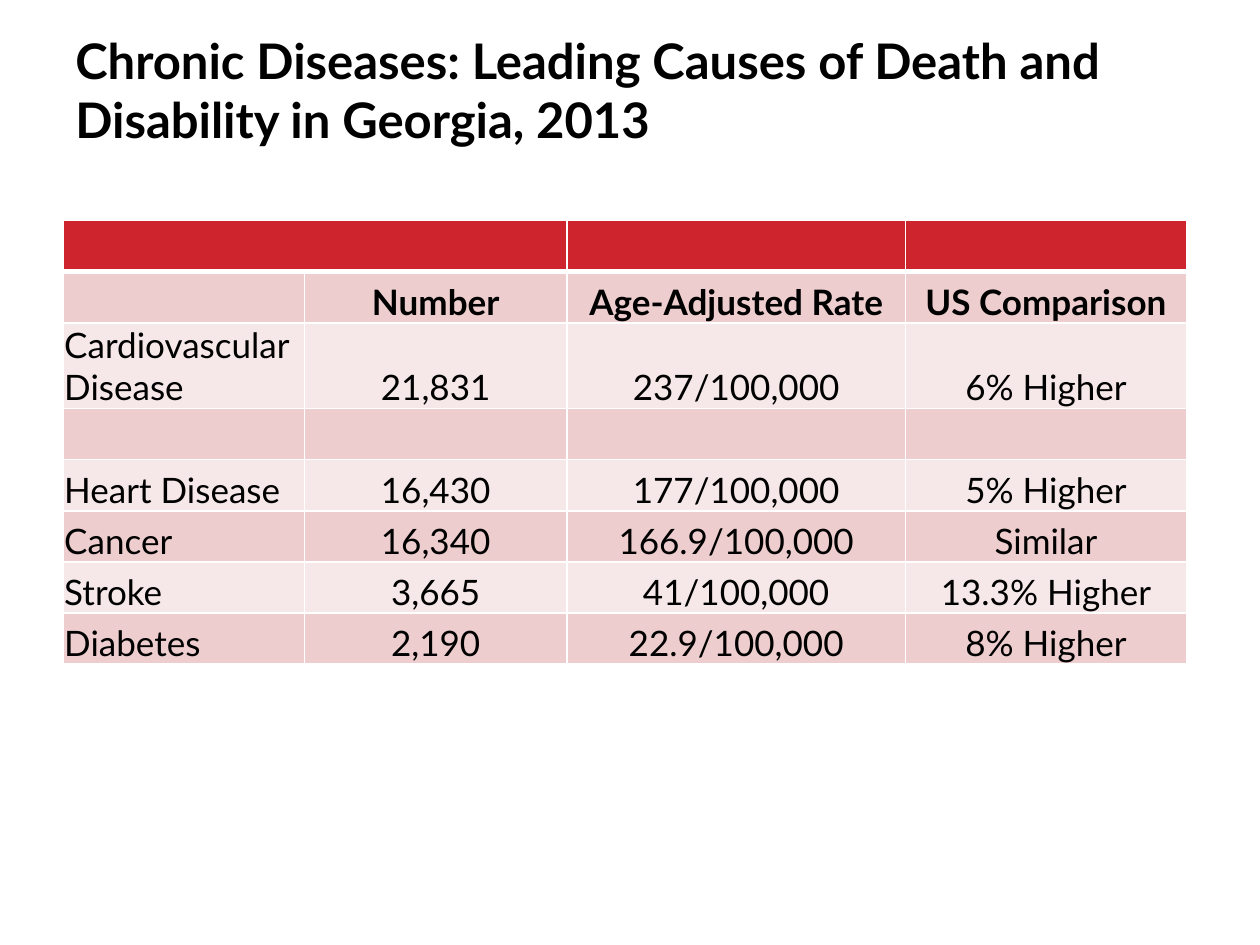
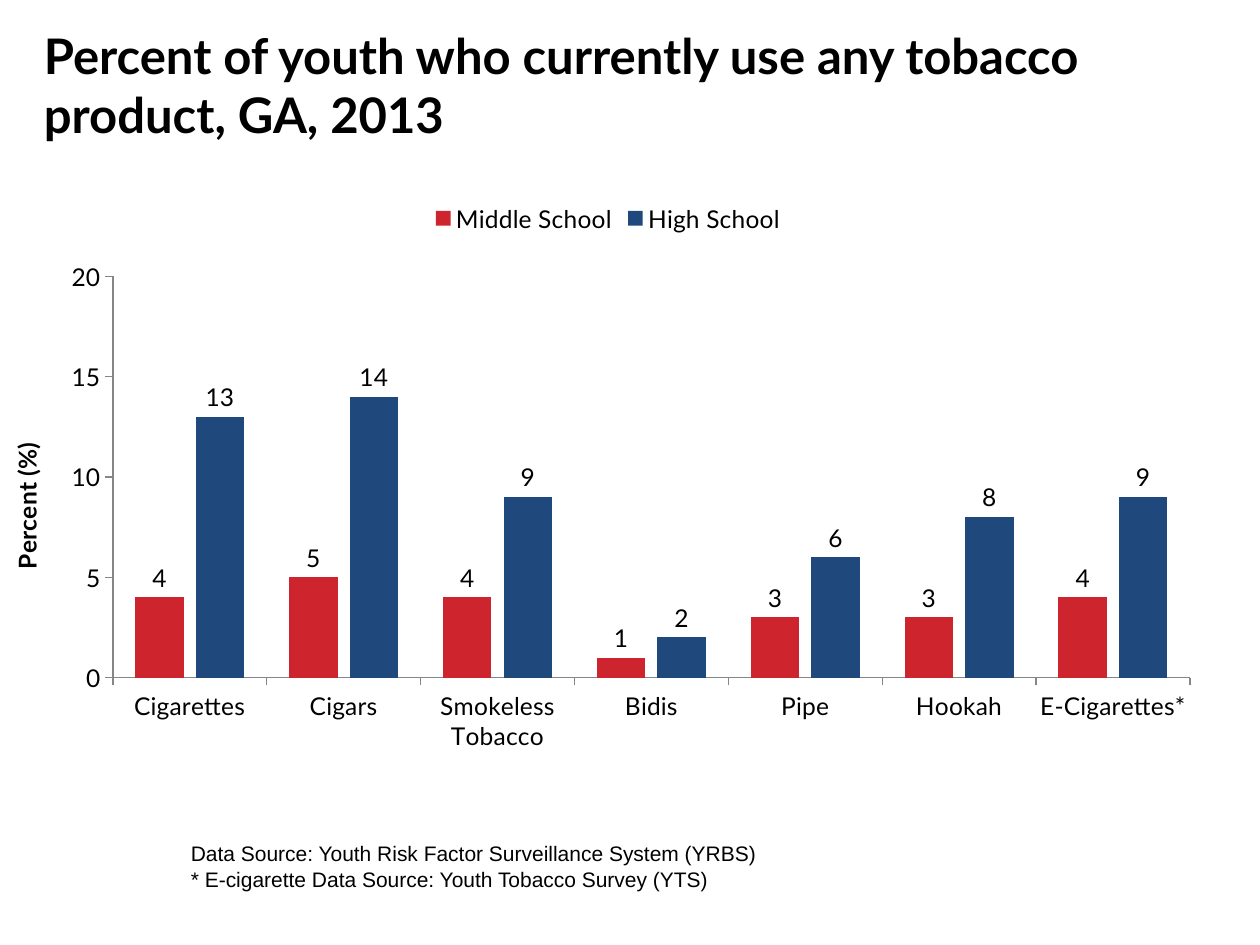
from dataclasses import dataclass

from lxml.etree import SubElement
from pptx import Presentation
from pptx.chart.data import CategoryChartData
from pptx.dml.color import RGBColor
from pptx.enum.chart import XL_CHART_TYPE as ChartType, XL_LABEL_POSITION as LabelPos
from pptx.enum.chart import XL_LEGEND_POSITION as LegendPos, XL_TICK_MARK as Tick
from pptx.enum.text import MSO_ANCHOR as Anchor, PP_ALIGN as Align
from pptx.oxml import parse_xml
from pptx.oxml.ns import nsdecls, qn
from pptx.util import Emu, Inches, Pt

CELL = Inches(1) / 12  # the slide is a grid of 120 columns by 90 rows
COLORS = {"text": "000000", "paper": "FFFFFF", "red": "CE242E", "blue": "1F497D",
          "band_dark": "EDCDCD", "band_light": "F6E8E8", "axis": "868686"}
FONT, NOTE_FONT = "Lato", "Arial"


@dataclass(frozen=True)
class Box:
    """A rectangle in grid cells."""
    col: float
    row: float
    cols: float
    rows: float

    def emu(self) -> tuple[Emu, ...]:
        return tuple(grid(n) for n in (self.col, self.row, self.cols, self.rows))


@dataclass(frozen=True)
class TextStyle:
    size: int
    bold: bool = False
    font: str = FONT


@dataclass(frozen=True)
class Series:
    name: str
    values: tuple[int, ...]
    color: str


TITLE = TextStyle(28, bold=True)
HEAD = TextStyle(20, bold=True)
BODY = TextStyle(20)
CHART = TextStyle(14)
AXIS_TITLE = TextStyle(14, bold=True)
NOTE = TextStyle(12, font=NOTE_FONT)

DISEASE_COLS = (23, 25, 32.25, 26.75)
TALL_ROW, TALL_ROWS = 2, 8.15
DISEASES = (
    ("", "", "", ""),
    ("", "Number", "Age-Adjusted Rate", "US Comparison"),
    ("Cardiovascular Disease", "21,831", "237/100,000", "6% Higher"),
    ("", "", "", ""),
    ("Heart Disease", "16,430", "177/100,000", "5% Higher"),
    ("Cancer", "16,340", "166.9/100,000", "Similar"),
    ("Stroke", "3,665", "41/100,000", "13.3% Higher"),
    ("Diabetes", "2,190", "22.9/100,000", "8% Higher"),
)
PRODUCTS = ("Cigarettes", "Cigars", "Smokeless Tobacco", "Bidis", "Pipe", "Hookah",
            "E-Cigarettes*")
SCHOOLS = (
    Series("Middle School", (4, 5, 4, 1, 3, 3, 4), "red"),
    Series("High School", (13, 14, 9, 2, 6, 8, 9), "blue"),
)
PLOT_AREA = {"x": 0.09, "y": 0.147, "w": 0.892, "h": 0.677}


def grid(cells: float) -> Emu:
    return Emu(round(cells * CELL))


def rgb(name: str) -> RGBColor:
    return RGBColor.from_string(COLORS[name])


def set_font(font, style: TextStyle) -> None:
    font.name, font.size, font.bold = style.font, Pt(style.size), style.bold
    font.color.rgb = rgb("text")


def add_run(p, text: str, style: TextStyle) -> None:
    r = p.add_run()
    r.text = text
    set_font(r.font, style)


def add_text(s, box: Box, lines: tuple[str, ...], style: TextStyle,
             anchor: Anchor = Anchor.TOP) -> None:
    tf = s.shapes.add_textbox(*box.emu()).text_frame
    tf.word_wrap, tf.vertical_anchor = True, anchor
    for i, line in enumerate(lines):
        add_run(tf.add_paragraph() if i else tf.paragraphs[0], line, style)


def add_title(s, box: Box, text: str) -> None:
    add_text(s, box, (text,), TITLE, Anchor.MIDDLE)


def set_borders(cell, bottom: float) -> None:
    """White rules of 1 pt, except for the given width below the cell."""
    tc_pr = cell._tc.get_or_add_tcPr()
    widths = {"lnL": 1, "lnR": 1, "lnT": 1, "lnB": bottom}
    for i, (tag, width) in enumerate(widths.items()):
        ln = parse_xml(f'<a:{tag} {nsdecls("a")} w="{Pt(width)}"><a:solidFill>'
                       f'<a:srgbClr val="{COLORS["paper"]}"/></a:solidFill></a:{tag}>')
        tc_pr.insert(i, ln)


def fill_cell(cell, row: int, col: int, text: str) -> None:
    cell.vertical_anchor = Anchor.BOTTOM
    cell.margin_left = cell.margin_right = cell.margin_top = Inches(0.01)
    cell.margin_bottom = 0
    cell.fill.solid()
    band = "band_dark" if row % 2 else "band_light"
    cell.fill.fore_color.rgb = rgb(band if row else "red")
    set_borders(cell, 1 if row else 3)
    p = cell.text_frame.paragraphs[0]
    p.alignment = Align.CENTER if col else Align.LEFT
    style = HEAD if row < 2 else BODY
    if text:
        add_run(p, text, style)
    else:
        set_font(p.font, style)


def add_disease_table(s, box: Box) -> None:
    table = s.shapes.add_table(len(DISEASES), len(DISEASE_COLS), *box.emu()).table
    for column, width in zip(table.columns, DISEASE_COLS):
        column.width = grid(width)
    row_height = (box.rows - TALL_ROWS) / (len(DISEASES) - 1)
    for i, texts in enumerate(DISEASES):
        table.rows[i].height = grid(TALL_ROWS if i == TALL_ROW else row_height)
        for j, text in enumerate(texts):
            fill_cell(table.cell(i, j), i, j, text)
    table.cell(0, 0).merge(table.cell(0, 1))


def set_plot_area(chart) -> None:
    plot_area = chart._chartSpace.chart.plotArea
    for old in plot_area.findall(qn("c:layout")):
        plot_area.remove(old)
    layout = parse_xml(f'<c:layout {nsdecls("c")}><c:manualLayout/></c:layout>')
    manual = layout[0]
    SubElement(manual, qn("c:layoutTarget")).set("val", "inner")
    for axis in "xy":
        SubElement(manual, qn(f"c:{axis}Mode")).set("val", "edge")
    for key, share in PLOT_AREA.items():
        SubElement(manual, qn(f"c:{key}")).set("val", str(share))
    plot_area.insert(0, layout)


def style_axes(chart) -> None:
    for axis in (chart.category_axis, chart.value_axis):
        axis.has_major_gridlines = False
        axis.major_tick_mark, axis.minor_tick_mark = Tick.OUTSIDE, Tick.NONE
        axis.format.line.color.rgb = rgb("axis")
        axis.format.line.width = Pt(0.75)
        set_font(axis.tick_labels.font, CHART)
    values = chart.value_axis
    values.minimum_scale, values.maximum_scale, values.major_unit = 0, 20, 5
    add_run(values.axis_title.text_frame.paragraphs[0], "Percent (%)", AXIS_TITLE)


def add_tobacco_chart(s, box: Box) -> None:
    data = CategoryChartData()
    data.categories = PRODUCTS
    for school in SCHOOLS:
        data.add_series(school.name, school.values)
    chart = s.shapes.add_chart(ChartType.COLUMN_CLUSTERED, *box.emu(), data).chart
    chart.has_title = False
    set_font(chart.font, CHART)
    chart.has_legend = True
    chart.legend.position = LegendPos.TOP
    chart.legend.include_in_layout = False
    set_font(chart.legend.font, CHART)
    style_axes(chart)

    plot = chart.plots[0]
    plot.gap_width, plot.overlap, plot.vary_by_categories = 93, -25, False
    for series, school in zip(plot.series, SCHOOLS):
        series.format.fill.solid()
        series.format.fill.fore_color.rgb = rgb(school.color)
        series.invert_if_negative = False
        labels = series.data_labels
        labels.show_value, labels.position = True, LabelPos.OUTSIDE_END
        set_font(labels.font, CHART)
    set_plot_area(chart)


def main() -> None:
    prs = Presentation()
    prs.slide_width, prs.slide_height = grid(120), grid(90)
    blank = prs.slide_layouts[6]

    s = prs.slides.add_slide(blank)
    add_disease_table(s, Box(6, 21, sum(DISEASE_COLS), 42.25))
    add_title(s, Box(6, 2.25, 107, 12.5),
              "Chronic Diseases: Leading Causes of Death and Disability in Georgia, 2013")

    s = prs.slides.add_slide(blank)
    add_title(s, Box(3, 1, 116, 14),
              "Percent of youth who currently use any tobacco product, GA, 2013")
    add_tobacco_chart(s, Box(0.4, 18, 115, 56.5))
    add_text(s, Box(17, 79.5, 66.5, 6),
             ("Data Source: Youth Risk Factor Surveillance System (YRBS)",
              "* E-cigarette Data Source: Youth Tobacco Survey (YTS)"), NOTE)

    prs.save("out.pptx")


if __name__ == "__main__":
    main()
